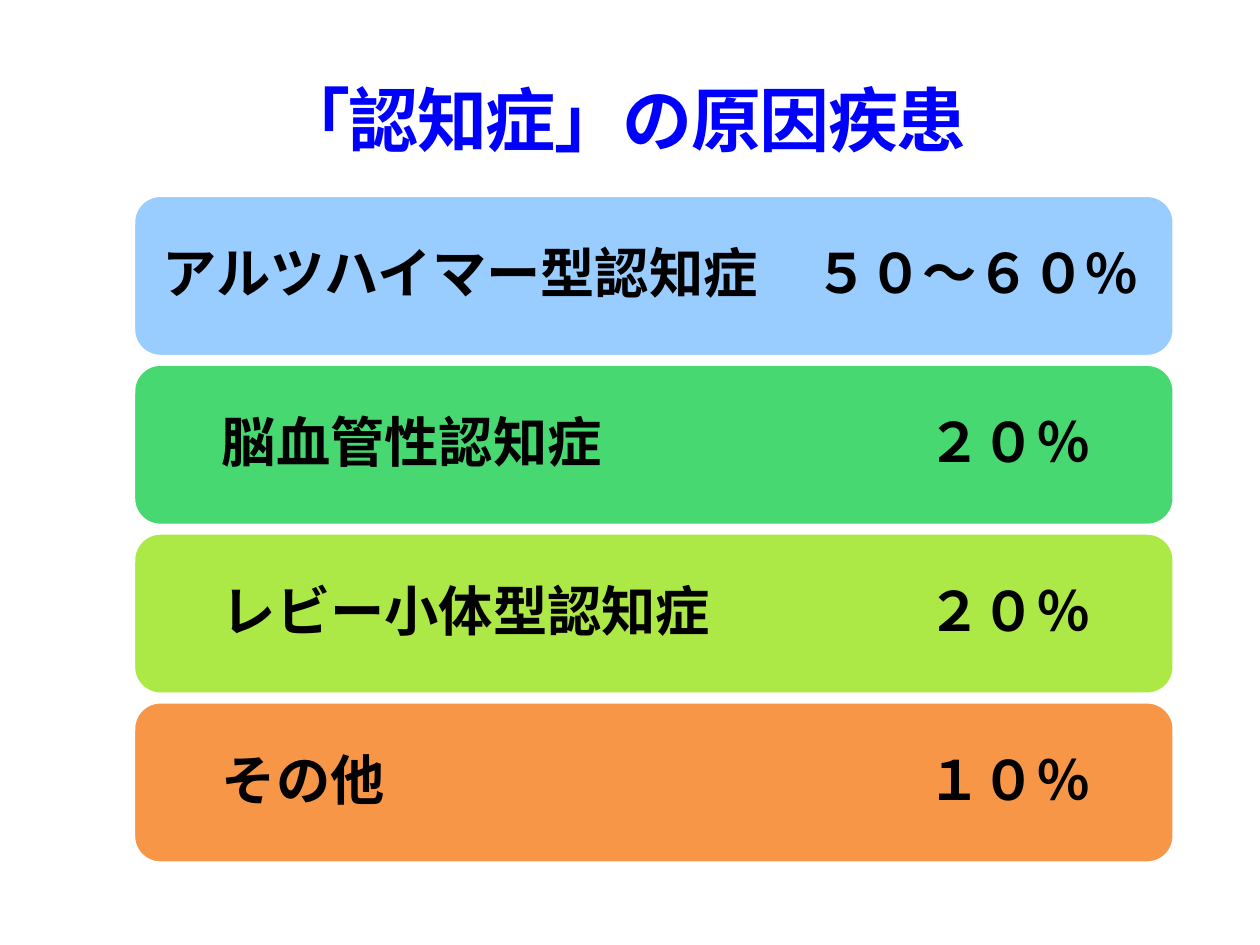
from lxml import etree
from pptx import Presentation
from pptx import util as u
from pptx.dml.color import RGBColor
from pptx.enum import shapes, text
from pptx.oxml.ns import qn

THEME = {
    "font": "Noto Sans CJK JP",
    "title": {"size": 40, "color": "0000FF"},
    "row": {"size": 31, "color": "000000"},
    "outline": "FFFFFF",
    "fills": ["99CCFF", "47D872", "ACE946", "F79646"],
}

# cause, share, left edge of the name, distance from the name to the share
CAUSES = [
    ("アルツハイマー型認知症", "５０～６０%", 1.29, 5.17),
    ("脳血管性認知症", "２０％", 1.76, 5.6),
    ("レビー小体型認知症", "２０％", 1.76, 5.6),
    ("その他", "１０％", 1.76, 5.6),
]
LEFT, TOP, WIDTH, HEIGHT, PITCH = 1.06, 1.55, 8.26, 1.28, 1.34
CORNER_INSET = 0.06


def write(frame, wording, style, margins):
    """Fill the frame with one bold line, in Latin and East Asian fonts alike."""
    layout = {"word_wrap": True, "auto_size": text.MSO_AUTO_SIZE.NONE,
              "vertical_anchor": text.MSO_ANCHOR.MIDDLE, **margins}
    for name, value in layout.items():
        setattr(frame, name, value)
    paragraph = frame.paragraphs[0]
    run = paragraph.add_run()
    run.text = wording
    for name, value in {"name": THEME["font"], "size": u.Pt(style["size"]), "bold": True}.items():
        setattr(run.font, name, value)
    run.font.color.rgb = RGBColor.from_string(style["color"])
    etree.SubElement(run.font._element, qn("a:ea"), typeface=THEME["font"])
    return paragraph, run


deck = Presentation()
deck.slide_width, deck.slide_height = u.Inches(10), u.Inches(7.5)
slide = deck.slides.add_slide(deck.slide_layouts[5])

heading = slide.shapes.title
heading.left, heading.top = u.Inches(1.92), u.Inches(0.44)
heading.width, heading.height = u.Inches(6.06), u.Inches(1)
paragraph, run = write(heading.text_frame, "「認知症」の原因疾患", THEME["title"], {})
paragraph.alignment = text.PP_ALIGN.CENTER
run.font._element.set("spc", "-80")

for index, (cause, share, name_left, share_offset) in enumerate(CAUSES):
    band = slide.shapes.add_shape(
        shapes.MSO_SHAPE.ROUNDED_RECTANGLE, u.Inches(LEFT), u.Inches(TOP + index * PITCH),
        u.Inches(WIDTH), u.Inches(HEIGHT))
    band.shadow.inherit = False
    band.fill.solid()
    band.fill.fore_color.rgb = RGBColor.from_string(THEME["fills"][index])
    band.line.color.rgb = RGBColor.from_string(THEME["outline"])
    band.line.width = u.Pt(2)

    margins = {"margin_left": u.Inches(name_left - LEFT - CORNER_INSET), "margin_right": 0}
    paragraph, run = write(band.text_frame, f"{cause}\t{share}", THEME["row"], margins)
    paragraph.alignment = text.PP_ALIGN.LEFT
    paragraph.line_spacing = 0.9
    tabs = etree.SubElement(paragraph._p.get_or_add_pPr(), qn("a:tabLst"))
    etree.SubElement(tabs, qn("a:tab"), pos=str(u.Inches(share_offset)), algn="l")

deck.save("out.pptx")
